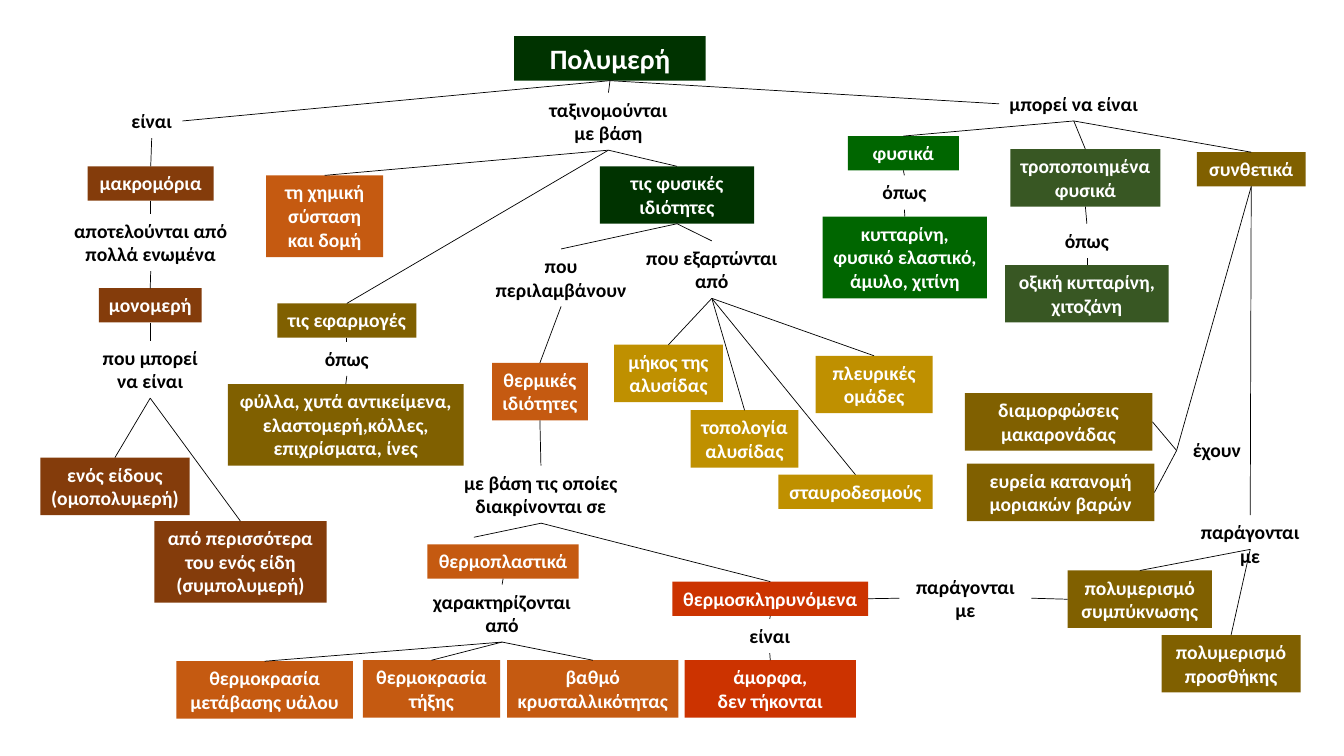
from lxml import etree
from pptx import Presentation
from pptx import util as u
from pptx.dml.color import RGBColor
from pptx.enum import shapes, text
from pptx.oxml.ns import qn

PX = 9144
ONE, TWO, THREE = 34, 57, 81
TOP, LEFT, BOTTOM, RIGHT = range(4)
FOREST, GREEN, MOSS = "003300", "006600", "385723"
BROWN, OLIVE, GOLD = "843C0B", "806000", "BF9000"
ORANGE, RED = "C55A11", "CC3300"

BOXES = {
    "macromolecules": (87, 165, 125, ONE, BROWN, "μακρομόρια"),
    "synthetic": (1187, 151, 108, ONE, OLIVE, "συνθετικά"),
    "natural": (841, 135, 110, ONE, GREEN, "φυσικά"),
    "chemical": (264, 174, 116, THREE, ORANGE, "τη χημική\nσύσταση\nκαι δομή"),
    "uses": (275, 301, 138, ONE, OLIVE, "τις εφαρμογές"),
    "physical": (595, 165, 153, TWO, FOREST, "τις φυσικές\nιδιότητες"),
    "monomers": (98, 286, 102, ONE, BROWN, "μονομερή"),
    "one kind": (40, 454, 148, TWO, BROWN, "ενός είδους\n(ομοπολυμερή)"),
    "more kinds": (153, 517, 171, THREE, BROWN,
                   "από περισσότερα\nτου ενός είδη\n(συμπολυμερή)"),
    "natural list": (816, 215, 163, THREE, GREEN,
                     "κυτταρίνη,\nφυσικό ελαστικό, άμυλο, χιτίνη"),
    "uses list": (226, 381, 234, THREE, OLIVE,
                  "φύλλα, χυτά αντικείμενα,\nελαστομερή,κόλλες,\nεπιχρίσματα, ίνες"),
    "thermal": (488, 360, 95, TWO, ORANGE, "θερμικές\nιδιότητες"),
    "thermoplastic": (424, 540, 150, ONE, ORANGE, "θερμοπλαστικά"),
    "thermoset": (667, 577, 194, ONE, RED, "θερμοσκληρυνόμενα"),
    "spaghetti": (957, 390, 186, TWO, OLIVE, "διαμορφώσεις\nμακαρονάδας"),
    "distribution": (959, 460, 186, TWO, OLIVE, "ευρεία κατανομή\nμοριακών βαρών"),
    "addition": (1152, 630, 138, TWO, OLIVE, "πολυμερισμό\nπροσθήκης"),
    "condensation": (1059, 566, 143, TWO, OLIVE, "πολυμερισμό\nσυμπύκνωσης"),
    "length": (609, 342, 108, TWO, GOLD, "μήκος της\nαλυσίδας"),
    "side groups": (809, 353, 116, TWO, GOLD, "πλευρικές\nομάδες"),
    "crosslinks": (772, 471, 153, ONE, GOLD, "σταυροδεσμούς"),
    "topology": (685, 407, 107, TWO, GOLD, "τοπολογία\nαλυσίδας"),
    "glass point": (175, 656, 175, TWO, ORANGE, "θερμοκρασία\nμετάβασης υάλου"),
    "melting point": (360, 655, 136, TWO, ORANGE, "θερμοκρασία\nτήξης"),
    "crystallinity": (503, 655, 170, TWO, ORANGE, "βαθμό\nκρυσταλλικότητας"),
    "amorphous": (679, 655, 170, TWO, RED, "άμορφα,\nδεν τήκονται"),
    "modified": (1002, 148, 149, TWO, MOSS, "τροποποιημένα φυσικά"),
    "modified list": (997, 263, 162, TWO, MOSS, "οξική κυτταρίνη, χιτοζάνη"),
}

LABELS = {
    "are": (120, 103, 61, ONE, "είναι"),
    "can be": (991, 86, 148, ONE, "μπορεί να είναι"),
    "classified": (510, 92, 187, TWO, "ταξινομούνται\nμε βάση"),
    "have": (1167, 430, 80, ONE, "έχουν"),
    "consist": (63, 212, 173, TWO, "αποτελούνται από\nπολλά ενωμένα"),
    "may be": (68, 338, 162, TWO, "που μπορεί\nνα είναι"),
    "uses such as": (312, 339, 64, ONE, "όπως"),
    "natural such as": (865, 174, 64, ONE, "όπως"),
    "modified such as": (1046, 222, 64, ONE, "όπως"),
    "include": (480, 247, 153, TWO, "που\nπεριλαμβάνουν"),
    "split": (438, 462, 197, TWO, "με βάση τις οποίες\nδιακρίνονται σε"),
    "made": (1170, 511, 140, ONE, "παράγονται με"),
    "depend": (604, 239, 204, TWO, "που εξαρτώνται\nαπό"),
    "marked": (418, 580, 160, TWO, "χαρακτηρίζονται\nαπό"),
    "set are": (733, 614, 61, ONE, "είναι"),
    "set made": (892, 565, 131, TWO, "παράγονται με"),
}

WRAPPED = {"natural list", "modified", "modified list", "made", "set made"}

BRANCHES = {
    "polymers": ["classified"],
    "classified": ["chemical", "uses", "physical"],
    "are": ["macromolecules"],
    "macromolecules": ["consist"],
    "consist": ["monomers"],
    "monomers": ["may be"],
    "may be": ["one kind", "more kinds"],
    "uses": ["uses such as"],
    "uses such as": ["uses list"],
    "physical": ["include", "depend"],
    "include": ["thermal"],
    "thermal": ["split"],
    "split": ["thermoset"],
    "depend": ["length", "topology", "crosslinks", "side groups"],
    "thermoplastic": ["marked"],
    "marked": ["glass point", "melting point", "crystallinity"],
    "thermoset": ["set are"],
    "set are": ["amorphous"],
    "can be": ["natural", "modified", "synthetic"],
    "natural": ["natural such as"],
    "natural such as": ["natural list"],
    "modified": ["modified such as"],
    "modified such as": ["modified list"],
    "synthetic": ["made"],
    "made": ["addition", "condensation"],
}

SIDE_LINKS = [
    ("polymers", BOTTOM, "are", RIGHT),
    ("polymers", BOTTOM, "can be", LEFT),
    ("synthetic", BOTTOM, "have", LEFT),
    ("have", LEFT, "spaghetti", RIGHT),
    ("have", LEFT, "distribution", RIGHT),
    ("thermoset", RIGHT, "set made", LEFT),
    ("set made", RIGHT, "condensation", LEFT),
]


def colour(code):
    return RGBColor.from_string(code)


def write(shape, words, ink, size, wrap):
    frame = shape.text_frame
    frame.word_wrap = wrap
    frame.vertical_anchor = text.MSO_ANCHOR.TOP
    for index, line in enumerate(words.split("\n")):
        para = frame.add_paragraph() if index else frame.paragraphs[0]
        para.text = line
        para.alignment = text.PP_ALIGN.CENTER
        para.font.name = "Calibri"
        para.font.size = u.Pt(size)
        para.font.bold = True
        para.font.color.rgb = colour(ink)


def add_box(page, x, y, w, h, fill, words, size=14, wrap=False):
    box = page.shapes.add_shape(shapes.MSO_SHAPE.RECTANGLE, x * PX, y * PX, w * PX, h * PX)
    box.shadow.inherit = False
    box.fill.solid()
    box.fill.fore_color.rgb = colour(fill)
    box.line.fill.background()
    write(box, words, "FFFFFF", size, wrap)
    return box


def add_label(page, x, y, w, h, words, wrap):
    label = page.shapes.add_textbox(x * PX, y * PX, w * PX, h * PX)
    write(label, words, "000000", 14, wrap)
    return label


def add_line(page, x1=0, y1=0, x2=0, y2=0):
    line = page.shapes.add_connector(
        shapes.MSO_CONNECTOR.STRAIGHT, x1 * PX, y1 * PX, x2 * PX, y2 * PX)
    line.line.color.rgb = colour("000000")
    line.line.width = u.Pt(0.5)
    etree.SubElement(line._element.spPr, qn("a:effectLst"))
    return line


def link(page, start, start_side, end, end_side):
    line = add_line(page)
    line.begin_connect(start, start_side)
    line.end_connect(end, end_side)


def main():
    deck = Presentation()
    deck.slide_width = 1333 * PX
    deck.slide_height = 750 * PX
    page = deck.slides.add_slide(deck.slide_layouts[6])

    nodes = {"polymers": add_box(page, 510, 36, 190, 44, FOREST, "Πολυμερή", size=20)}
    for name, spec_row in BOXES.items():
        nodes[name] = add_box(page, *spec_row, wrap=name in WRAPPED)
    for name, label_row in LABELS.items():
        nodes[name] = add_label(page, *label_row, wrap=name in WRAPPED)

    for start, ends in BRANCHES.items():
        for end in ends:
            link(page, nodes[start], BOTTOM, nodes[end], TOP)
    for start, start_side, end, end_side in SIDE_LINKS:
        link(page, nodes[start], start_side, nodes[end], end_side)
    add_line(page, 537, 519, 470, 533)

    deck.save("out.pptx")


if __name__ == "__main__":
    main()
